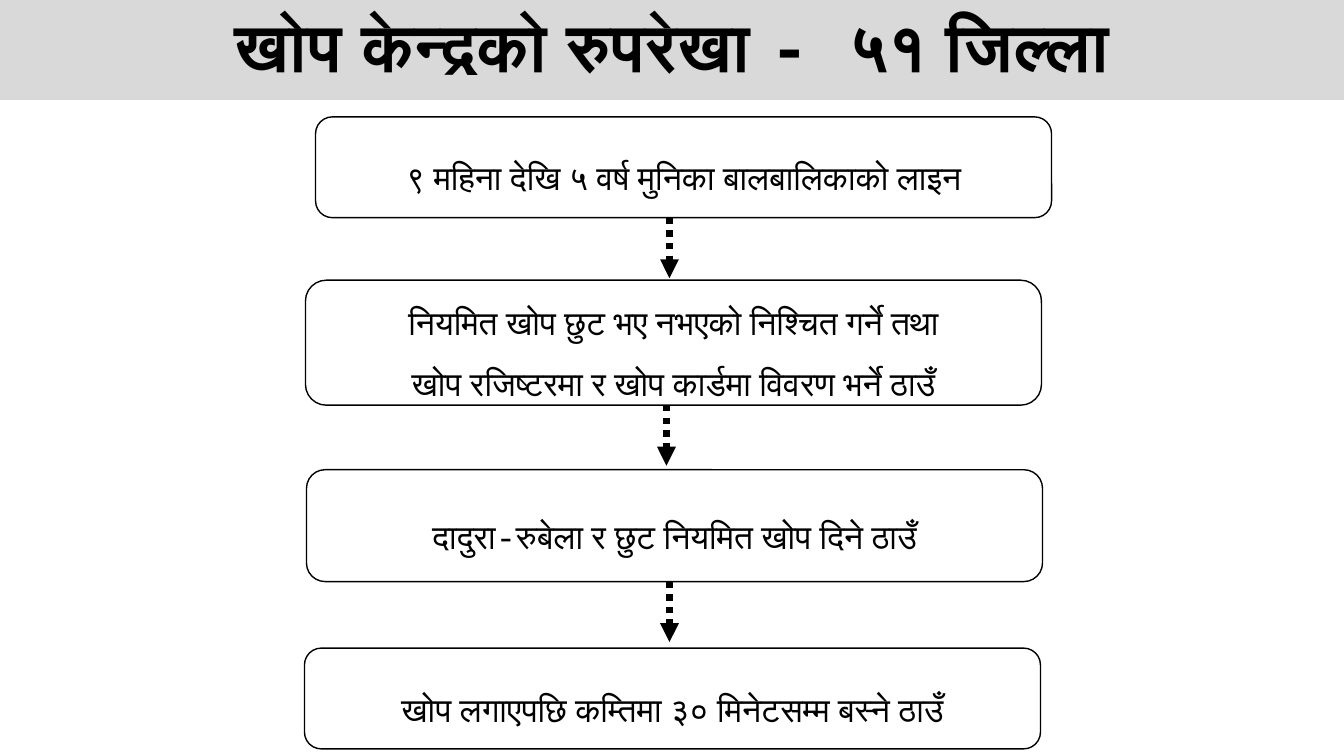
"""Flow of a vaccination centre: a title band and four steps joined by arrows."""
import pptx
import pptx.dml.color
import pptx.enum.dml
import pptx.enum.shapes
import pptx.enum.text
import pptx.oxml.ns
import pptx.util
from lxml import etree
from pptx.util import Inches

FONT = "Courier New"
BLACK = "000000"
WHITE = "FFFFFF"
BAND_GREY = "D9D9D9"
BOX_WIDTH = 7.3
ARROW_LENGTH = 0.6

STEPS = [
    (3.13, 1.16, 1.0, ["९ महिना देखि ५ वर्ष मुनिका बालबालिकाको लाइन"]),
    (3.03, 2.78, 1.24, ["नियमित खोप छुट भए नभएको निश्चित गर्ने तथा",
                        "खोप रजिष्टरमा र खोप कार्डमा विवरण भर्ने ठाउँ"]),
    (3.04, 4.66, 1.11, ["दादुरा-रुबेला र छुट नियमित खोप दिने ठाउँ"]),
    (3.02, 6.43, 1.0, ["खोप लगाएपछि कम्तिमा ३० मिनेटसम्म बस्ने ठाउँ"]),
]
ARROW_LEFTS = [6.64, 6.61, 6.64]


def paint(color_holder, color):
    color_holder.solid()
    color_holder.fore_color.rgb = pptx.dml.color.RGBColor.from_string(color)


def write_text(shape, lines, size, bold=False, spacing=1.0, anchor="MIDDLE"):
    frame = shape.text_frame
    frame.word_wrap = True
    frame.auto_size = pptx.enum.text.MSO_AUTO_SIZE.NONE
    frame.vertical_anchor = pptx.enum.text.MSO_ANCHOR[anchor]
    for index, line in enumerate(lines):
        para = frame.add_paragraph() if index else frame.paragraphs[0]
        para.alignment = pptx.enum.text.PP_ALIGN.CENTER
        para.line_spacing = spacing
        span = para.add_run()
        span.text = line
        span.font.name = FONT
        span.font.size = pptx.util.Pt(size)
        span.font.bold = bold
        paint(span.font.fill, BLACK)


def add_title(page, text):
    title = page.shapes.title
    title.left, title.top = Inches(0), Inches(-0.01)
    title.width, title.height = Inches(13.33), Inches(1)
    paint(title.fill, BAND_GREY)
    write_text(title, [text], size=48, bold=True, anchor="TOP")


def add_step(page, left, top, height, lines):
    box = page.shapes.add_shape(
        pptx.enum.shapes.MSO_SHAPE.ROUNDED_RECTANGLE,
        Inches(left), Inches(top), Inches(BOX_WIDTH), Inches(height))
    box.shadow.inherit = False
    paint(box.fill, WHITE)
    paint(box.line.fill, BLACK)
    box.line.width = pptx.util.Pt(1)
    write_text(box, lines, size=24, spacing=1.5)


def add_arrow(page, left, top):
    arrow = page.shapes.add_connector(
        pptx.enum.shapes.MSO_CONNECTOR.STRAIGHT,
        Inches(left), Inches(top), Inches(left), Inches(top + ARROW_LENGTH))
    paint(arrow.line.fill, BLACK)
    arrow.line.width = pptx.util.Pt(4.5)
    arrow.line.dash_style = pptx.enum.dml.MSO_LINE.ROUND_DOT
    properties = arrow.element.spPr
    line = properties.find(pptx.oxml.ns.qn("a:ln"))
    etree.SubElement(line, pptx.oxml.ns.qn("a:tailEnd"), type="triangle")
    etree.SubElement(properties, pptx.oxml.ns.qn("a:effectLst"))


def main():
    deck = pptx.Presentation()
    deck.slide_width, deck.slide_height = Inches(13.33), Inches(7.5)
    page = deck.slides.add_slide(deck.slide_layouts.get_by_name("Title Only"))
    add_title(page, "खोप केन्द्रको रुपरेखा - ५१ जिल्ला")
    for step in STEPS:
        add_step(page, *step)
    for arrow_left, (_, top, height, _) in zip(ARROW_LEFTS, STEPS):
        add_arrow(page, arrow_left, top + height)
    deck.save("out.pptx")


if __name__ == "__main__":
    main()
